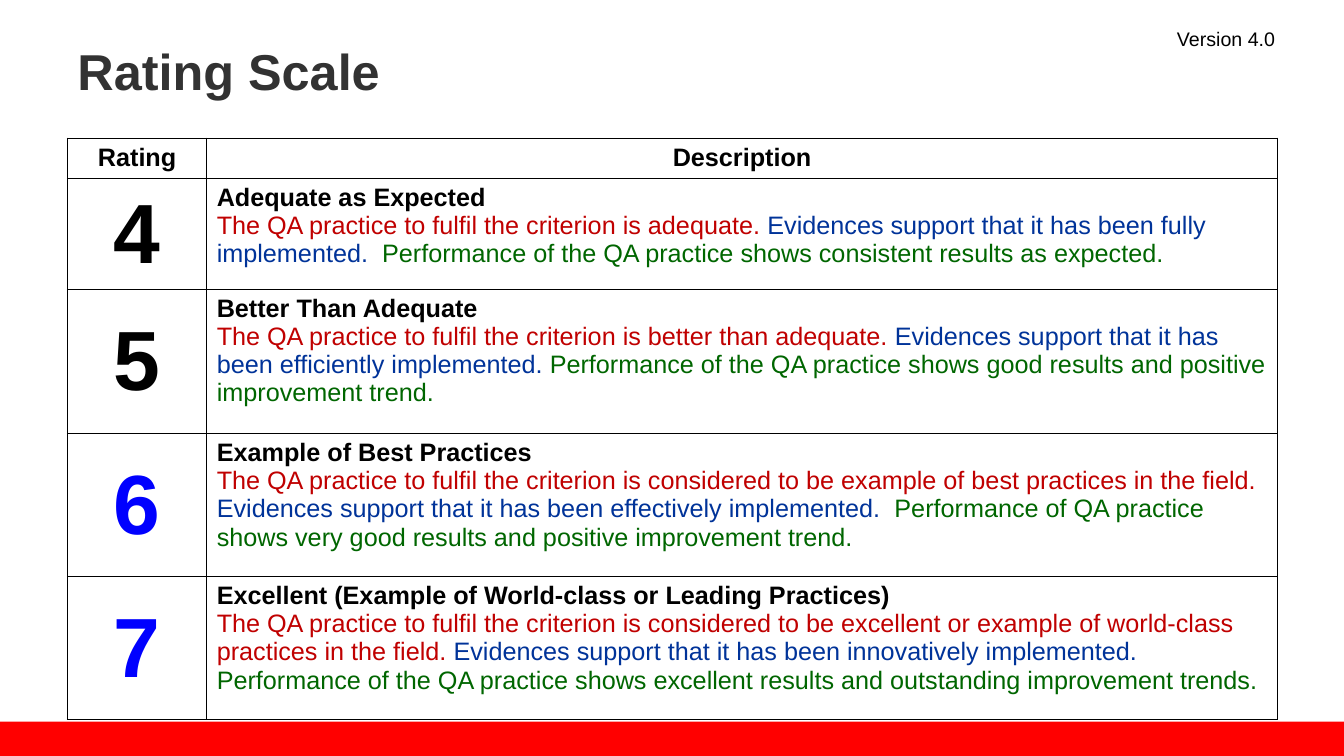
from dataclasses import dataclass

import lxml.etree
import pptx
import pptx.dml.color
import pptx.enum.shapes
import pptx.enum.text
import pptx.oxml.ns
import pptx.util
from pptx.util import Inches

ALIGN = pptx.enum.text.PP_ALIGN
ANCHOR = pptx.enum.text.MSO_ANCHOR


@dataclass(frozen=True)
class Theme:
    font: str = "Arial"
    title_size: int = 36
    rating_size: int = 60
    body_size: int = 18
    version_size: int = 14
    title: str = "323232"
    text: str = "000000"
    top_rating: str = "0000FF"
    practice: str = "C00000"
    evidence: str = "003399"
    performance: str = "006600"
    band: str = "FF0000"
    paper: str = "FFFFFF"
    border: str = "000000"
    border_width: int = 1


THEME = Theme()

COLUMN_WIDTHS = (1.38, 10.62)
ROW_HEIGHTS = (0.37, 1.08, 1.43, 1.42, 1.42)
HEADINGS = ("Rating", "Description")

# Rating, its colour, level name, then practice, evidence and performance
RATINGS = (
    ("4", THEME.text, "Adequate as Expected",
     ("The QA practice to fulfil the criterion is adequate. ",
      "Evidences support that it has been fully implemented.  ",
      "Performance of the QA practice shows consistent results as expected.")),
    ("5", THEME.text, "Better Than Adequate",
     ("The QA practice to fulfil the criterion is better than adequate. ",
      "Evidences support that it has been efficiently implemented. ",
      "Performance of the QA practice shows good results and positive "
      "improvement trend.")),
    ("6", THEME.top_rating, "Example of Best Practices",
     ("The QA practice to fulfil the criterion is considered to be example "
      "of best practices in the field. ",
      "Evidences support that it has been effectively implemented.  ",
      "Performance of QA practice shows very good results and positive "
      "improvement trend.")),
    ("7", THEME.top_rating,
     "Excellent (Example of World-class or Leading Practices)",
     ("The QA practice to fulfil the criterion is considered to be excellent "
      "or example of world-class practices in the field. ",
      "Evidences support that it has been innovatively implemented. ",
      "Performance of the QA practice shows excellent results and "
      "outstanding improvement trends.")),
)


def rgb(code):
    return pptx.dml.color.RGBColor.from_string(code)


def add_run(paragraph, text, size, color=THEME.text, bold=False):
    run = paragraph.add_run()
    run.text = text
    font_format = {"name": THEME.font, "size": pptx.util.Pt(size), "bold": bold}
    for attribute, value in font_format.items():
        setattr(run.font, attribute, value)
    run.font.color.rgb = rgb(color)


def add_label(slide, box, text, align, **style):
    label = slide.shapes.add_textbox(*map(Inches, box))
    frame_format = {"word_wrap": True, "vertical_anchor": ANCHOR.MIDDLE}
    for attribute, value in frame_format.items():
        setattr(label.text_frame, attribute, value)
    paragraph = label.text_frame.paragraphs[0]
    paragraph.alignment = align
    add_run(paragraph, text, **style)


def add_band(slide, box):
    band = slide.shapes.add_shape(
        pptx.enum.shapes.MSO_SHAPE.RECTANGLE, *map(Inches, box))
    band.shadow.inherit = False
    band.fill.solid()
    band.fill.fore_color.rgb = rgb(THEME.band)
    band.line.fill.background()


def format_cell(cell):
    properties = cell._tc.get_or_add_tcPr()
    qn = pptx.oxml.ns.qn
    for side in ("a:lnL", "a:lnR", "a:lnT", "a:lnB"):
        line = lxml.etree.SubElement(
            properties, qn(side), w=str(pptx.util.Pt(THEME.border_width)))
        fill = lxml.etree.SubElement(line, qn("a:solidFill"))
        lxml.etree.SubElement(fill, qn("a:srgbClr"), val=THEME.border)
    cell.fill.solid()
    cell.fill.fore_color.rgb = rgb(THEME.paper)


def fill_centred(cell, text, **style):
    paragraph = cell.text_frame.paragraphs[0]
    paragraph.alignment = ALIGN.CENTER
    add_run(paragraph, text, bold=True, **style)


def fill_description(cell, level, sentences):
    frame = cell.text_frame
    add_run(frame.paragraphs[0], level, THEME.body_size, bold=True)
    details = frame.add_paragraph()
    colors = (THEME.practice, THEME.evidence, THEME.performance)
    for sentence, color in zip(sentences, colors):
        add_run(details, sentence, THEME.body_size, color)


def add_rating_table(slide, left, top):
    scale = slide.shapes.add_table(
        len(ROW_HEIGHTS), len(COLUMN_WIDTHS), Inches(left), Inches(top),
        Inches(sum(COLUMN_WIDTHS)), Inches(sum(ROW_HEIGHTS))).table
    for column, width in zip(scale.columns, COLUMN_WIDTHS):
        column.width = Inches(width)
    for row, height in zip(scale.rows, ROW_HEIGHTS):
        row.height = Inches(height)
    for cell in scale.iter_cells():
        format_cell(cell)

    # Heading row
    for column, heading in enumerate(HEADINGS):
        fill_centred(scale.cell(0, column), heading, size=THEME.body_size)

    # One row per rating
    for row, (rating, color, level, sentences) in enumerate(RATINGS, start=1):
        rating_cell = scale.cell(row, 0)
        rating_cell.vertical_anchor = ANCHOR.MIDDLE
        fill_centred(rating_cell, rating, size=THEME.rating_size, color=color)
        fill_description(scale.cell(row, 1), level, sentences)


def main():
    deck = pptx.Presentation()
    deck.slide_width, deck.slide_height = Inches(13.33), Inches(7.5)
    slide = deck.slides.add_slide(deck.slide_layouts[6])

    # Footer band and title
    add_band(slide, (0, 7.16, 13.33, 0.34))
    add_label(slide, (0.67, 0.24, 12.01, 0.91), "Rating Scale", ALIGN.LEFT,
              size=THEME.title_size, color=THEME.title, bold=True)

    # Rating scale
    add_rating_table(slide, 0.67, 1.37)

    # Version note
    add_label(slide, (11.35, 0.21, 1.62, 0.34), "Version 4.0", ALIGN.CENTER,
              size=THEME.version_size)

    deck.save("out.pptx")


if __name__ == "__main__":
    main()
